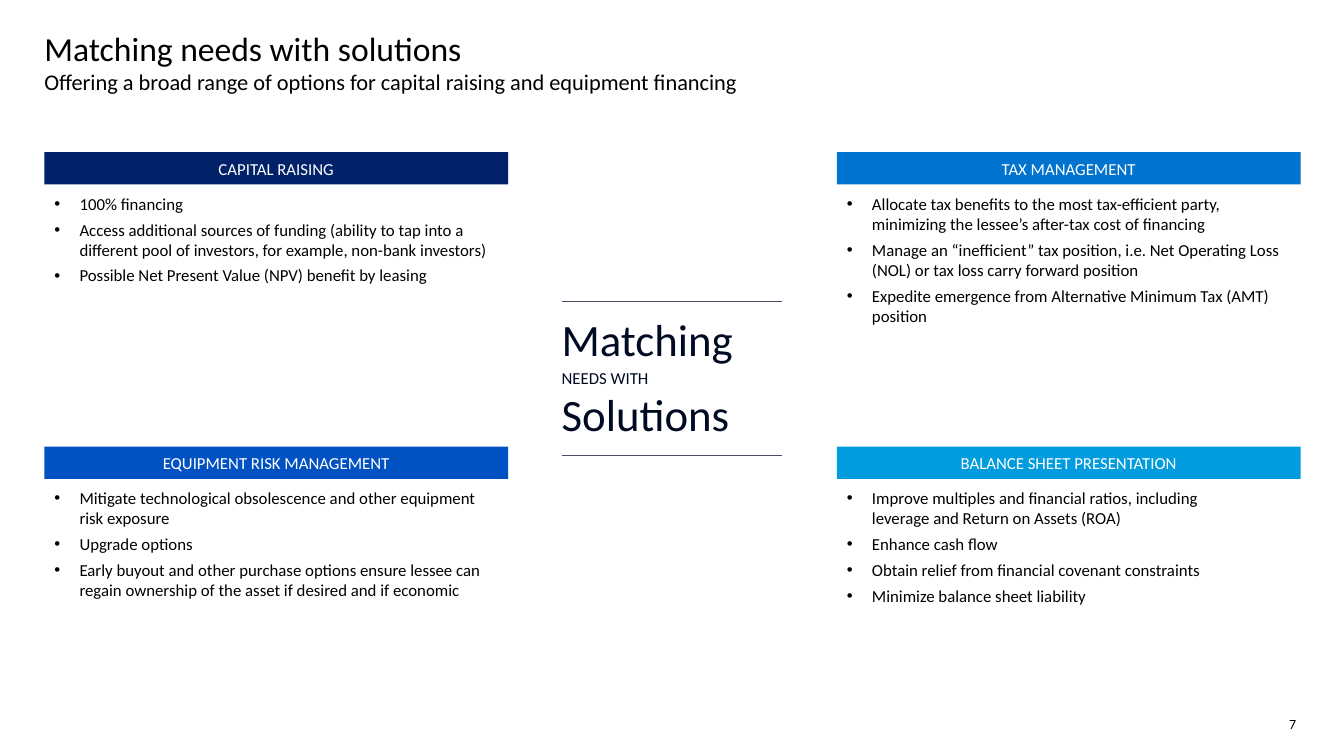
"""Build the slide that matches financing needs with solutions."""
from dataclasses import dataclass

import pptx
import pptx.dml.color
import pptx.enum.shapes
import pptx.enum.text
import pptx.oxml
import pptx.oxml.ns
import pptx.util

Inches = pptx.util.Inches
ALIGN = pptx.enum.text.PP_ALIGN
ANCHOR = pptx.enum.text.MSO_ANCHOR


@dataclass(frozen=True)
class Theme:
    """Colours, font and type sizes of the slide."""
    font: str = "Calibri"
    black: str = "000000"
    white: str = "FFFFFF"
    ink: str = "000A23"
    rule: str = "454F61"
    title: int = 24
    subtitle: int = 16
    body: int = 12
    display: int = 32
    number: int = 10


THEME = Theme()
COLUMN_LEFTS = (0.44, 8.3)
ROW_TOPS = (1.51, 4.43)
PANEL_WIDTH = 4.6
PANEL_HEIGHT = 2.25

PANELS = [
    ("CAPITAL RAISING", "012169", 4.52, [
        "100% financing",
        "Access additional sources of funding (ability to tap into a different "
        "pool of investors, for example, non-bank investors)",
        "Possible Net Present Value (NPV) benefit by leasing"]),
    ("TAX MANAGEMENT", "0073CF", 4.52, [
        "Allocate tax benefits to the most tax-efficient party, minimizing the "
        "lessee’s after-tax cost of financing",
        "Manage an “inefficient” tax position, i.e. Net Operating Loss (NOL) "
        "or tax loss carry forward position",
        "Expedite emergence from Alternative Minimum Tax (AMT) position"]),
    ("EQUIPMENT RISK MANAGEMENT", "0052C2", 4.52, [
        "Mitigate technological obsolescence and other equipment risk exposure",
        "Upgrade options",
        "Early buyout and other purchase options ensure lessee can regain "
        "ownership of the asset if desired and if economic"]),
    ("BALANCE SHEET PRESENTATION", "009CDE", 4.19, [
        "Improve multiples and financial ratios, including leverage and Return "
        "on Assets (ROA)",
        "Enhance cash flow",
        "Obtain relief from financial covenant constraints",
        "Minimize balance sheet liability"]),
]


def rgb(colour):
    """Return the colour object for a hex string."""
    return pptx.dml.color.RGBColor.from_string(colour)


def format_runs(paragraph, colour, *sizes):
    """Give each run of a paragraph its size, with the shared font and colour."""
    for run, size in zip(paragraph.runs, sizes):
        run.font.name = THEME.font
        run.font.size = pptx.util.Pt(size)
        run.font.color.rgb = rgb(colour)


def set_margins(target, horizontal, vertical):
    """Set the inner margins of a text frame or table cell."""
    target.margin_left = target.margin_right = Inches(horizontal)
    target.margin_top = target.margin_bottom = Inches(vertical)


def add_text_box(slide, box, text, horizontal=0.1):
    """Add a wrapping text box and return its text frame."""
    frame = slide.shapes.add_textbox(*map(Inches, box)).text_frame
    frame.word_wrap = True
    set_margins(frame, horizontal, 0.05)
    frame.text = text
    return frame


def add_heading(slide, box):
    """Add the title with its subtitle on the next line."""
    frame = add_text_box(
        slide, box, "Matching needs with solutions\vOffering a broad range of "
        "options for capital raising and equipment financing", 0)
    format_runs(frame.paragraphs[0], THEME.black, THEME.title, THEME.subtitle)


def add_bullet(paragraph):
    """Turn a paragraph into a hanging bullet."""
    properties = paragraph._p.get_or_add_pPr()
    properties.set("marL", str(Inches(0.25)))
    properties.set("indent", str(Inches(-0.25)))
    namespaces = pptx.oxml.ns.nsdecls("a")
    for element in ('buFont typeface="Arial"', 'buChar char="•"'):
        properties.append(pptx.oxml.parse_xml(f"<a:{element} {namespaces}/>"))


def add_panel(slide, box, heading, colour, text_width, bullets):
    """Add a coloured heading bar with a bullet list below it."""
    left, top, width, height = box
    bar = slide.shapes.add_shape(
        pptx.enum.shapes.MSO_SHAPE.RECTANGLE,
        *map(Inches, (left, top, width, 0.32)))
    bar.shadow.inherit = False
    bar.fill.solid()
    bar.fill.fore_color.rgb = rgb(colour)
    bar.line.fill.background()
    bar.text_frame.text = heading
    bar.text_frame.vertical_anchor = ANCHOR.MIDDLE
    set_margins(bar.text_frame, 0.12, 0.12)
    bar.text_frame.paragraphs[0].alignment = ALIGN.CENTER
    format_runs(bar.text_frame.paragraphs[0], THEME.white, THEME.body)

    frame = add_text_box(slide, (left, top + 0.36, text_width, height - 0.36),
                         "\n".join(bullets))
    for paragraph in frame.paragraphs:
        add_bullet(paragraph)
        paragraph.space_after = pptx.util.Pt(4)
        format_runs(paragraph, THEME.black, THEME.body)


def set_borders(cell):
    """Rule a cell above and below and leave its sides open."""
    properties = cell._tc.get_or_add_tcPr()
    namespaces = pptx.oxml.ns.nsdecls("a")
    line = f'<a:solidFill><a:srgbClr val="{THEME.rule}"/></a:solidFill>'
    sides = (("lnL", "<a:noFill/>"), ("lnR", "<a:noFill/>"),
             ("lnT", line), ("lnB", line))
    for position, (side, fill) in enumerate(sides):
        properties.insert(position, pptx.oxml.parse_xml(
            f'<a:{side} {namespaces} w="12700">{fill}</a:{side}>'))


def add_motto(slide, box):
    """Add the ruled one-cell table in the centre."""
    table = slide.shapes.add_table(1, 1, *map(Inches, box)).table
    table.first_row = table.horz_banding = False
    cell = table.cell(0, 0)
    cell.fill.background()
    set_borders(cell)
    set_margins(cell, 0, 0.12)
    cell.vertical_anchor = ANCHOR.MIDDLE
    cell.text_frame.text = "Matching\vNEEDS WITH\nSolutions"
    for paragraph in cell.text_frame.paragraphs:
        paragraph.alignment = ALIGN.JUSTIFY
        format_runs(paragraph, THEME.ink, THEME.display, THEME.body)


def add_page_number(slide, box):
    """Add the page number."""
    paragraph = add_text_box(slide, box, "7").paragraphs[0]
    paragraph.alignment = ALIGN.CENTER
    format_runs(paragraph, THEME.black, THEME.number)


def main():
    """Build and save the presentation."""
    presentation = pptx.Presentation()
    presentation.slide_width = Inches(13.33)
    presentation.slide_height = Inches(7.5)
    slide = presentation.slides.add_slide(presentation.slide_layouts[6])
    add_heading(slide, (0.44, 0.23, 12.45, 0.78))
    for index, panel in enumerate(PANELS):
        row, column = divmod(index, 2)
        box = (COLUMN_LEFTS[column], ROW_TOPS[row], PANEL_WIDTH, PANEL_HEIGHT)
        add_panel(slide, box, *panel)
    add_motto(slide, (5.57, 2.99, 2.19, 1.53))
    add_page_number(slide, (12.42, 7.05, 0.8, 0.25))
    presentation.save("out.pptx")


if __name__ == "__main__":
    main()
